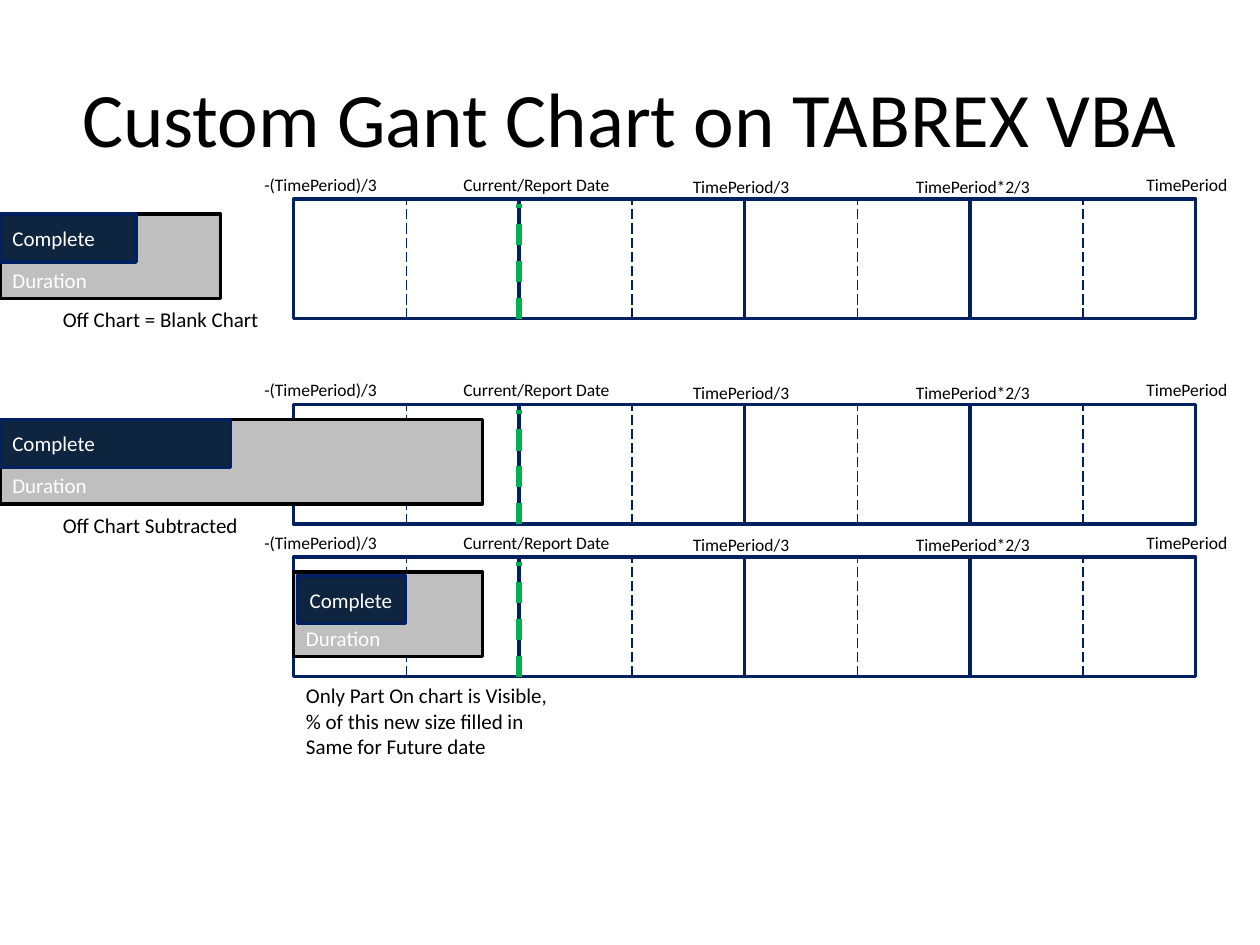
from pptx import Presentation
from pptx.dml.color import RGBColor
from pptx.enum.dml import MSO_LINE_DASH_STYLE as DASH
from pptx.enum.shapes import MSO_CONNECTOR as CONNECTOR, MSO_SHAPE as SHAPE
from pptx.enum.text import MSO_ANCHOR as ANCHOR, MSO_AUTO_SIZE as AUTO, PP_ALIGN as ALIGN
from pptx.util import Inches, Pt
from lxml import etree

COLORS = {"navy": "002060", "complete": "0F243E", "duration": "BFBFBF",
          "today": "00B050", "black": "000000", "white": "FFFFFF"}
RGB = {name: RGBColor.from_string(code) for name, code in COLORS.items()}
DRAWING_NS = "http://schemas.openxmlformats.org/drawingml/2006/main"

deck = Presentation()
deck.slide_width, deck.slide_height = Inches(10), Inches(7.5)
slide = deck.slides.add_slide(deck.slide_layouts[5])
shapes = slide.shapes


def write(holder, text, size, color, frame_format):
    frame = holder.text_frame
    frame.text = text
    for name, value in frame_format.items():
        setattr(frame, name, value)
    for paragraph in frame.paragraphs:
        paragraph.alignment = ALIGN.CENTER if size == 44 else ALIGN.LEFT
        for name, value in {"size": Pt(size), "name": "Calibri"}.items():
            setattr(paragraph.font, name, value)
        paragraph.font.color.rgb = RGB[color]


def box(left, top, width, height, fill, line):
    rect = shapes.add_shape(SHAPE.RECTANGLE, Inches(left), Inches(top), Inches(width), Inches(height))
    rect.shadow.inherit = False
    rect.fill.solid()
    rect.fill.fore_color.rgb = RGB[fill]
    rect.line.color.rgb = RGB[line]
    rect.line.width = Pt(2)
    return rect


title = shapes.title
title_place = {"left": 0.5, "top": 0.3, "width": 9, "height": 1.25}
for name, value in title_place.items():
    setattr(title, name, Inches(value))
write(title, "Custom Gant Chart on TABREX VBA", 44, "black",
      {"vertical_anchor": ANCHOR.MIDDLE, "word_wrap": True})

chart_left, period, chart_height = 2.33, 1.79, 0.95
today = chart_left + period
scale = [("-(TimePeriod)/3", 2, -0.25, 1.17), ("Current/Report Date", 3.58, -0.25, 1.44),
         ("TimePeriod", 9, -0.25, 1), ("TimePeriod/3", 5.4, -0.23, 1),
         ("TimePeriod*2/3", 7.17, -0.23, 1.17)]
cases = [
    {"top": 1.58, "duration": (0, 1.7, 1.75), "complete": (0, 1.7, 1.08),
     "note": ("Off Chart = Blank Chart", 0.4, 2.38, 1.79, 0.3)},
    {"top": 3.21, "duration": (0, 3.33, 3.83), "complete": (0, 3.33, 1.83),
     "note": ("Off Chart Subtracted", 0.4, 4.02, 1.79, 0.3)},
    {"top": 4.42, "duration": (2.33, 4.54, 1.5), "complete": (2.36, 4.57, 0.86),
     "note": ("Only Part On chart is Visible,\n% of this new size filled in Same for Future date",
              2.33, 5.37, 2.33, 0.71)},
]

for case in cases:
    top = case["top"]
    bottom = top + chart_height
    for column in range(4):
        box(chart_left + column * period, top, period, chart_height, "white", "navy")

    markers = [(chart_left + (column + 0.5) * period, top, "navy", 0.75, DASH.LONG_DASH)
               for column in range(4)]
    markers.append((today, top + 0.04, "today", 3, DASH.DASH))
    for x, end, color, weight, dash in markers:
        marker = shapes.add_connector(CONNECTOR.STRAIGHT, Inches(x), Inches(bottom), Inches(x), Inches(end))
        marker.line.color.rgb = RGB[color]
        marker.line.width = Pt(weight)
        marker.line.dash_style = dash
        etree.SubElement(marker._element.spPr, f"{{{DRAWING_NS}}}effectLst")

    captions = [(text, left, top + rise, width, 0.27, 10) for text, left, rise, width in scale]
    captions.append((*case["note"], 12))
    for text, left, y, width, height, size in captions:
        caption = shapes.add_textbox(Inches(left), Inches(y), Inches(width), Inches(height))
        write(caption, text, size, "black", {"word_wrap": True, "auto_size": AUTO.SHAPE_TO_FIT_TEXT})

    duration = box(*case["duration"], 0.67, "duration", "black")
    write(duration, "Duration", 12, "white", {"vertical_anchor": ANCHOR.BOTTOM})
    complete = box(*case["complete"], 0.38, "complete", "navy")
    write(complete, "Complete", 12, "white", {"vertical_anchor": ANCHOR.MIDDLE})

deck.save("out.pptx")
